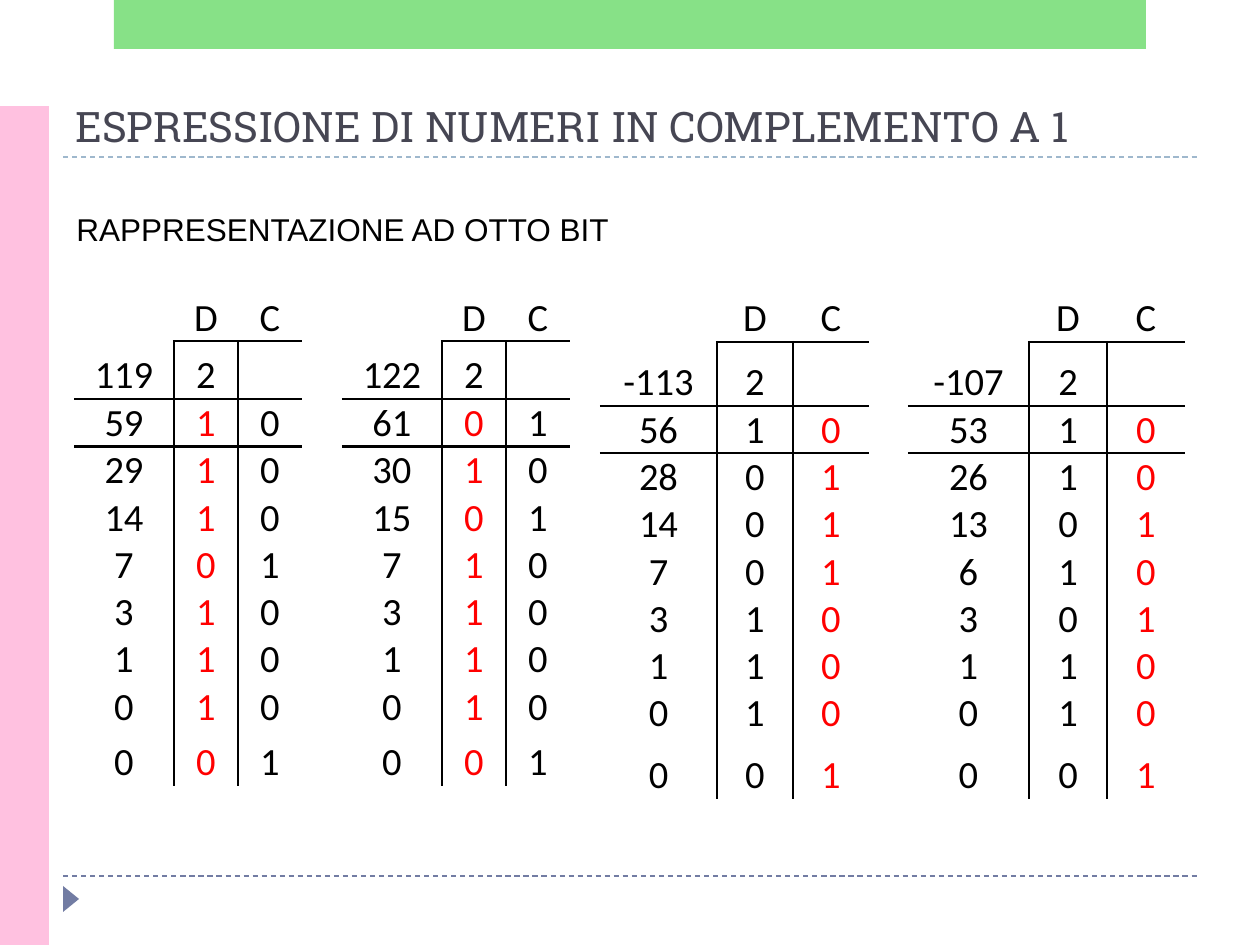
"""Build the slide on numbers in one's complement."""
from dataclasses import dataclass

from lxml.etree import SubElement
from pptx import Presentation
from pptx.dml.color import RGBColor
from pptx.enum.dml import MSO_LINE
from pptx.enum.shapes import MSO_CONNECTOR, MSO_SHAPE
from pptx.enum.text import MSO_ANCHOR, PP_ALIGN
from pptx.oxml import parse_xml
from pptx.oxml.ns import nsdecls, qn
from pptx.util import Pt

SCALE = 914400 / 126
PLAIN = "{2D5ABB26-0587-4C30-8999-92F81FD0307C}"


@dataclass(frozen=True)
class Theme:
    ink: str = "000000"
    mark: str = "FF0000"
    title: str = "464653"
    slate: str = "727CA3"
    mist: str = "9FB8CD"
    pink: str = "FFC1E0"
    green: str = "62D862"
    big: int = 24
    mid: int = 22
    small: int = 18
    head: str = "Roboto Slab"
    body: str = "Arial"
    digit: str = "Calibri"


@dataclass(frozen=True)
class Block:
    kind: MSO_SHAPE
    box: tuple[int, int, int, int]
    fill: str
    turn: int = 0
    alpha: int = 100


@dataclass(frozen=True)
class Rule:
    top: int
    color: str


@dataclass(frozen=True)
class Label:
    text: str
    box: tuple[int, int, int, int]
    font: str
    size: int
    color: str
    wrap: bool
    anchor: MSO_ANCHOR


@dataclass(frozen=True)
class Grid:
    num: int
    left: int
    cols: tuple[int, int, int]
    rows: tuple[int, ...]


THEME = Theme()
LOW = (47, 58, *[47] * 7, 56)
HIGH = (48, 64, *[47] * 7, 62)
RULES = [Rule(876, THEME.slate), Rule(157, THEME.mist)]
BLOCKS = [
    Block(MSO_SHAPE.ISOSCELES_TRIANGLE, (58, 891, 26, 16), THEME.slate, turn=90),
    Block(MSO_SHAPE.RECTANGLE, (0, 106, 49, 839), THEME.pink),
    Block(MSO_SHAPE.RECTANGLE, (114, 0, 1032, 49), THEME.green, alpha=76),
]
LABELS = [
    Label("ESPRESSIONE DI NUMERI IN COMPLEMENTO A 1", (63, 69, 1134, 88),
          THEME.head, THEME.big, THEME.title, True, MSO_ANCHOR.BOTTOM),
    Label("RAPPRESENTAZIONE AD OTTO BIT", (64, 204, 563, 50),
          THEME.body, THEME.small, THEME.ink, False, MSO_ANCHOR.TOP),
]
GRIDS = [
    Grid(122, 342, (100, 64, 64), LOW),
    Grid(119, 74, (100, 64, 64), LOW),
    Grid(-113, 600, (117, 76, 76), HIGH),
    Grid(-107, 908, (121, 78, 78), HIGH),
]


def px(size: int) -> int:
    return round(size * SCALE)


def style(para, font: str, size: int, color: str) -> None:
    for run in para.runs:
        run.font.name = font
        run.font.size = Pt(size)
        run.font.color.rgb = RGBColor.from_string(color)


def draw_rule(slide, rule: Rule) -> None:
    line = slide.shapes.add_connector(
        MSO_CONNECTOR.STRAIGHT, px(63), px(rule.top), px(1197), px(rule.top))
    line.line.color.rgb = RGBColor.from_string(rule.color)
    line.line.width = Pt(0.75)
    line.line.dash_style = MSO_LINE.DASH
    SubElement(line._element.spPr, qn("a:effectLst"))


def draw_block(slide, block: Block) -> None:
    shape = slide.shapes.add_shape(block.kind, *map(px, block.box))
    shape.shadow.inherit = False
    shape.rotation = block.turn
    shape.line.fill.background()
    shape.fill.solid()
    shape.fill.fore_color.rgb = RGBColor.from_string(block.fill)
    if block.alpha < 100:
        tint = shape._element.spPr.find(qn("a:solidFill"))[0]
        SubElement(tint, qn("a:alpha"), val=str(block.alpha * 1000))


def draw_label(slide, label: Label) -> None:
    frame = slide.shapes.add_textbox(*map(px, label.box)).text_frame
    frame.word_wrap = label.wrap
    frame.vertical_anchor = label.anchor
    frame.text = label.text
    style(frame.paragraphs[0], label.font, label.size, label.color)


def digits(num: int) -> list[tuple[str, str, str]]:
    size = abs(num)
    rows = [("", "D", "C"), (str(num), "2", "")]
    for place in range(8):
        bit = size >> place & 1
        rows.append((str(size >> place + 1), str(bit), str(1 - bit)))
    return rows


def edges(row: int, col: int) -> str:
    tests = {
        "L": row > 0 and col == 1,
        "R": row > 0 and col == 0,
        "T": row == 2 or (row == 1 and col > 0),
        "B": row == 1 or (row == 0 and col > 0),
    }
    return "".join(side for side, drawn in tests.items() if drawn)


def fill_cell(cell, text: str, color: str, sides: str) -> None:
    cell.margin_left = cell.margin_right = cell.margin_top = px(1)
    cell.margin_bottom = 0
    cell.vertical_anchor = MSO_ANCHOR.BOTTOM
    cell.fill.background()
    para = cell.text_frame.paragraphs[0]
    para.text = text
    para.alignment = PP_ALIGN.CENTER
    style(para, THEME.digit, THEME.mid, color)
    props = cell._tc.get_or_add_tcPr()
    for spot, side in enumerate(sides):
        props.insert(spot, parse_xml(
            f'<a:ln{side} {nsdecls("a")} w="{Pt(1.5)}"><a:solidFill>'
            f'<a:srgbClr val="{THEME.ink}"/></a:solidFill></a:ln{side}>'))


def draw_grid(slide, grid: Grid) -> None:
    table = slide.shapes.add_table(
        len(grid.rows), len(grid.cols), px(grid.left), px(294),
        px(sum(grid.cols)), px(sum(grid.rows))).table
    table.first_row = table.horz_banding = False
    table._tbl.tblPr.find(qn("a:tableStyleId")).text = PLAIN
    for col, width in zip(table.columns, grid.cols):
        col.width = px(width)
    for row, height in zip(table.rows, grid.rows):
        row.height = px(height)
    red = 1 if grid.num > 0 else 2
    for row, texts in enumerate(digits(grid.num)):
        for col, text in enumerate(texts):
            color = THEME.mark if row > 1 and col == red else THEME.ink
            fill_cell(table.cell(row, col), text, color, edges(row, col))


def main() -> None:
    deck = Presentation()
    deck.slide_width, deck.slide_height = px(1260), px(945)
    slide = deck.slides.add_slide(deck.slide_layouts[6])
    for draw, items in ((draw_rule, RULES), (draw_block, BLOCKS),
                        (draw_label, LABELS), (draw_grid, GRIDS)):
        for item in items:
            draw(slide, item)
    deck.save("out.pptx")


if __name__ == "__main__":
    main()
